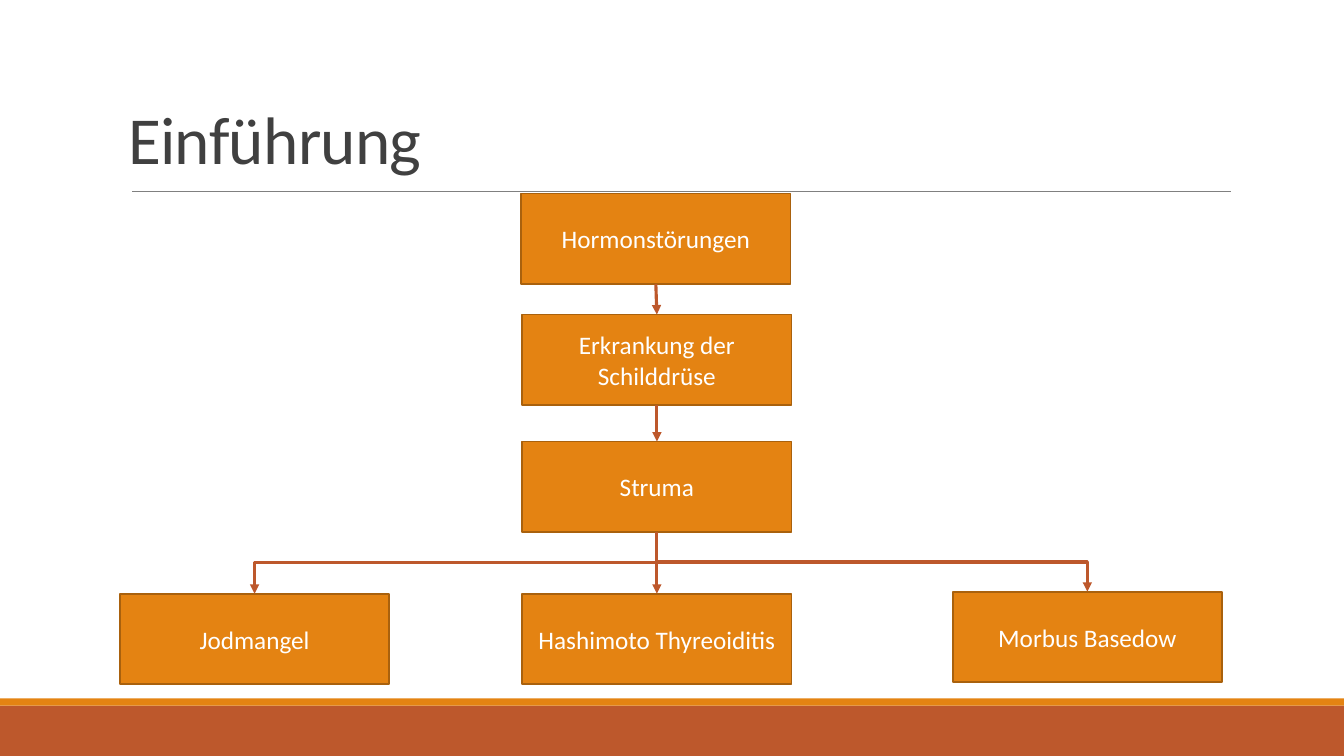
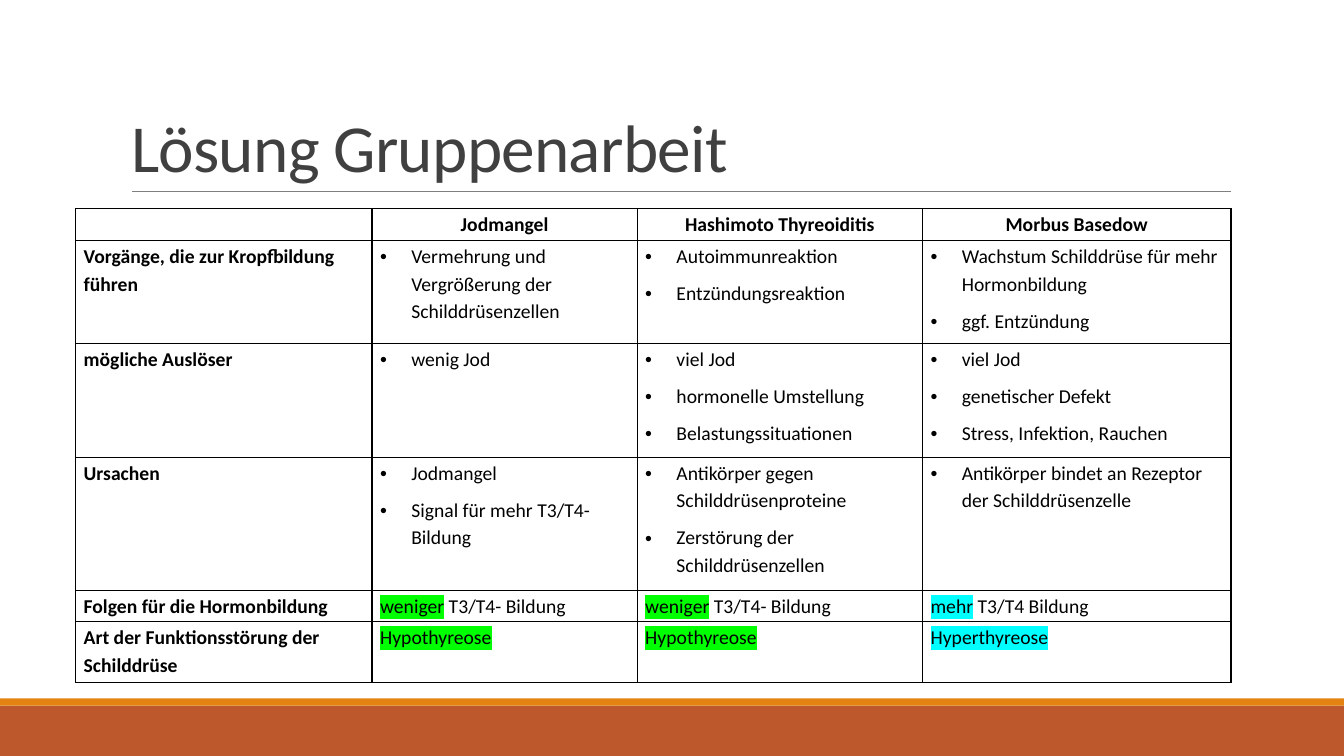
"""Builds two slides on thyroid disorders: a cause tree and a comparison table."""
from lxml import etree
from pptx import Presentation
from pptx.dml.color import RGBColor
from pptx.enum import shapes, text
from pptx.oxml.ns import qn
from pptx.util import Inches, Pt

COLORS = {
    "orange": "E48312", "edge": "A9610D", "rust": "BD582C", "rule": "808080",
    "title": "404040", "white": "FFFFFF", "black": "000000",
    "less": "00FF00", "more": "00FFFF",
}
FONT = "Calibri"
SLIDE_W, SLIDE_H = 13.33, 7.5
BANDS = [("rust", 7, 0.5), ("orange", 6.93, 0.07)]
RULE_X, RULE_Y = (1.31, 12.21), 1.9
TITLE_W, TITLE_H = 11, 1.59

BOX_W, BOX_H = 2.67, 0.9
BOXES = {
    "Hormonstörungen": (5.17, 1.92),
    "Erkrankung der Schilddrüse": (5.18, 3.12),
    "Struma": (5.18, 4.38),
    "Jodmangel": (1.19, 5.89),
    "Hashimoto Thyreoiditis": (5.18, 5.89),
    "Morbus Basedow": (9.45, 5.87),
}
ARROWS = [
    ("Hormonstörungen", "Erkrankung der Schilddrüse"),
    ("Erkrankung der Schilddrüse", "Struma"),
    ("Struma", "Jodmangel"),
    ("Struma", "Hashimoto Thyreoiditis"),
    ("Struma", "Morbus Basedow"),
]

TABLE_AT = (0.75, 2.07)
COL_W = [2.94, 2.63, 2.83, 3.06]
ROW_H = [0.31, 1.02, 1.13, 1.32, 0.31, 0.61]
MARGINS = {"margin_left": 0.08, "margin_top": 0.01, "margin_right": 0.08, "margin_bottom": 0}
BULLET_INDENT = 0.31
HEADERS = ["", "Jodmangel", "Hashimoto Thyreoiditis", "Morbus Basedow"]
BULLET_ROWS = [
    ("Vorgänge, die zur Kropfbildung führen",
     ["Vermehrung und Vergrößerung der Schilddrüsenzellen"],
     ["Autoimmunreaktion", "Entzündungsreaktion"],
     ["Wachstum Schilddrüse für mehr Hormonbildung", "ggf. Entzündung"]),
    ("mögliche Auslöser",
     ["wenig Jod"],
     ["viel Jod", "hormonelle Umstellung", "Belastungssituationen"],
     ["viel Jod", "genetischer Defekt", "Stress, Infektion, Rauchen"]),
    ("Ursachen",
     ["Jodmangel", "Signal für mehr T3/T4-Bildung"],
     ["Antikörper gegen Schilddrüsenproteine", "Zerstörung der Schilddrüsenzellen"],
     ["Antikörper bindet an Rezeptor der Schilddrüsenzelle"]),
]
MARKED_ROWS = [
    ("Folgen für die Hormonbildung",
     ("less", "weniger", " T3/T4- Bildung"),
     ("less", "weniger", " T3/T4- Bildung"),
     ("more", "mehr", " T3/T4 Bildung")),
    ("Art der Funktionsstörung der Schilddrüse",
     ("less", "Hypothyreose", ""),
     ("less", "Hypothyreose", ""),
     ("more", "Hyperthyreose", "")),
]


def rgb(name):
    return RGBColor.from_string(COLORS[name])


def set_all(obj, values):
    for key, value in values.items():
        setattr(obj, key, value)


def sub(parent, tag, **attrs):
    return etree.SubElement(parent, qn(tag), attrs)


def add_run(p, content, size, color, bold=False):
    r = p.add_run()
    r.text = content
    set_all(r.font, {"size": Pt(size), "name": FONT, "bold": bold})
    r.font.color.rgb = rgb(color)
    return r


def add_rect(slide, x, y, w, h, fill, line=None):
    sp = slide.shapes.add_shape(shapes.MSO_SHAPE.RECTANGLE, *map(Inches, (x, y, w, h)))
    sp.shadow.inherit = False
    sp.fill.solid()
    sp.fill.fore_color.rgb = rgb(fill)
    if line:
        sp.line.color.rgb = rgb(line)
        sp.line.width = Pt(1.25)
    else:
        sp.line.fill.background()
    return sp


def style_line(c, color, width):
    c.line.color.rgb = rgb(color)
    c.line.width = Pt(width)
    sub(c.element.spPr, "a:effectLst")


def add_slide(prs, title, x, y):
    slide = prs.slides.add_slide(prs.slide_layouts[5])
    for fill, top, height in BANDS:
        add_rect(slide, 0, top, SLIDE_W, height, fill)
    left, right = RULE_X
    rule = slide.shapes.add_connector(
        shapes.MSO_CONNECTOR.STRAIGHT, *map(Inches, (left, RULE_Y, right, RULE_Y)))
    style_line(rule, "rule", 0.5)
    sp = slide.shapes.title
    set_all(sp, {"left": Inches(x), "top": Inches(y),
                 "width": Inches(TITLE_W), "height": Inches(TITLE_H)})
    sp.text_frame.vertical_anchor = text.MSO_ANCHOR.BOTTOM
    p = sp.text_frame.paragraphs[0]
    set_all(p, {"alignment": text.PP_ALIGN.LEFT, "line_spacing": 0.85})
    r = add_run(p, title, 48, "title")
    r.font._element.set("spc", "-50")
    return slide


def add_box(slide, label, x, y):
    sp = add_rect(slide, x, y, BOX_W, BOX_H, "orange", "edge")
    tf = sp.text_frame
    set_all(tf, {"word_wrap": True, "vertical_anchor": text.MSO_ANCHOR.MIDDLE})
    p = tf.paragraphs[0]
    p.alignment = text.PP_ALIGN.CENTER
    add_run(p, label, 18, "white")
    return sp


def add_arrow(slide, start, end):
    bent = abs(start.left - end.left) > Inches(0.1)
    kind = shapes.MSO_CONNECTOR.ELBOW if bent else shapes.MSO_CONNECTOR.STRAIGHT
    c = slide.shapes.add_connector(kind, 0, 0, 0, 0)
    c.begin_connect(start, 2)
    c.end_connect(end, 0)
    if bent:
        turn_upright(c, end.left > start.left)
    style_line(c, "rust", 2.25)
    sub(c.line._get_or_add_ln(), "a:tailEnd", type="triangle")


def turn_upright(c, to_right):
    w, h = c.height, c.width
    mid_x, mid_y = c.left + c.width // 2, c.top + c.height // 2
    set_all(c, {"left": mid_x - w // 2, "top": mid_y - h // 2, "width": w, "height": h})
    set_all(c.element.spPr.xfrm, {"rot": 270 if to_right else 90, "flipH": to_right})


def add_bullet(p):
    pPr = p._p.get_or_add_pPr()
    indent = Inches(BULLET_INDENT)
    pPr.set("marL", str(indent))
    pPr.set("indent", str(-indent))
    sub(pPr, "a:buFont", typeface="Arial")
    sub(pPr, "a:buChar", char="•")


def highlight(r, color):
    mark = etree.Element(qn("a:highlight"))
    sub(mark, "a:srgbClr", val=COLORS[color])
    r.font._element.find(qn("a:solidFill")).addnext(mark)


def add_borders(cell):
    tcPr = cell._tc.get_or_add_tcPr()
    for i, side in enumerate(("a:lnL", "a:lnR", "a:lnT", "a:lnB")):
        ln = etree.Element(qn(side), w=str(Pt(1)))
        sub(sub(ln, "a:solidFill"), "a:srgbClr", val=COLORS["black"])
        tcPr.insert(i, ln)


def fill_cell(cell, content, centred):
    set_all(cell, {key: Inches(value) for key, value in MARGINS.items()})
    cell.fill.background()
    add_borders(cell)
    if not content:
        return
    tf = cell.text_frame
    for i, item in enumerate(content if isinstance(content, list) else [content]):
        p = tf.add_paragraph() if i else tf.paragraphs[0]
        set_all(p, {"line_spacing": 1.15, "space_after": Pt(7),
                    "alignment": text.PP_ALIGN.CENTER if centred else text.PP_ALIGN.LEFT})
        if isinstance(item, tuple):
            color, marked, rest = item
            highlight(add_run(p, marked, 14, "black"), color)
            if rest:
                add_run(p, rest, 14, "black")
        else:
            add_run(p, item, 14, "black", bold=isinstance(content, str))
        if isinstance(content, list):
            add_bullet(p)


def add_comparison(slide):
    rows = [HEADERS, *BULLET_ROWS, *MARKED_ROWS]
    size = (sum(COL_W), sum(ROW_H))
    table = slide.shapes.add_table(
        len(rows), len(COL_W), *map(Inches, TABLE_AT + size)).table
    set_all(table, {"first_row": False, "horz_banding": False})
    for col, width in zip(table.columns, COL_W):
        col.width = Inches(width)
    for i, (row, height, contents) in enumerate(zip(table.rows, ROW_H, rows)):
        row.height = Inches(height)
        for cell, content in zip(row.cells, contents):
            fill_cell(cell, content, centred=i == 0)


def main():
    prs = Presentation()
    set_all(prs, {"slide_width": Inches(SLIDE_W), "slide_height": Inches(SLIDE_H)})
    slide = add_slide(prs, "Einführung", 1.17, 0.23)
    boxes = {label: add_box(slide, label, *at) for label, at in BOXES.items()}
    for start, end in ARROWS:
        add_arrow(slide, boxes[start], boxes[end])
    add_comparison(add_slide(prs, "Lösung Gruppenarbeit", 1.2, 0.31))
    prs.save("out.pptx")


if __name__ == "__main__":
    main()
